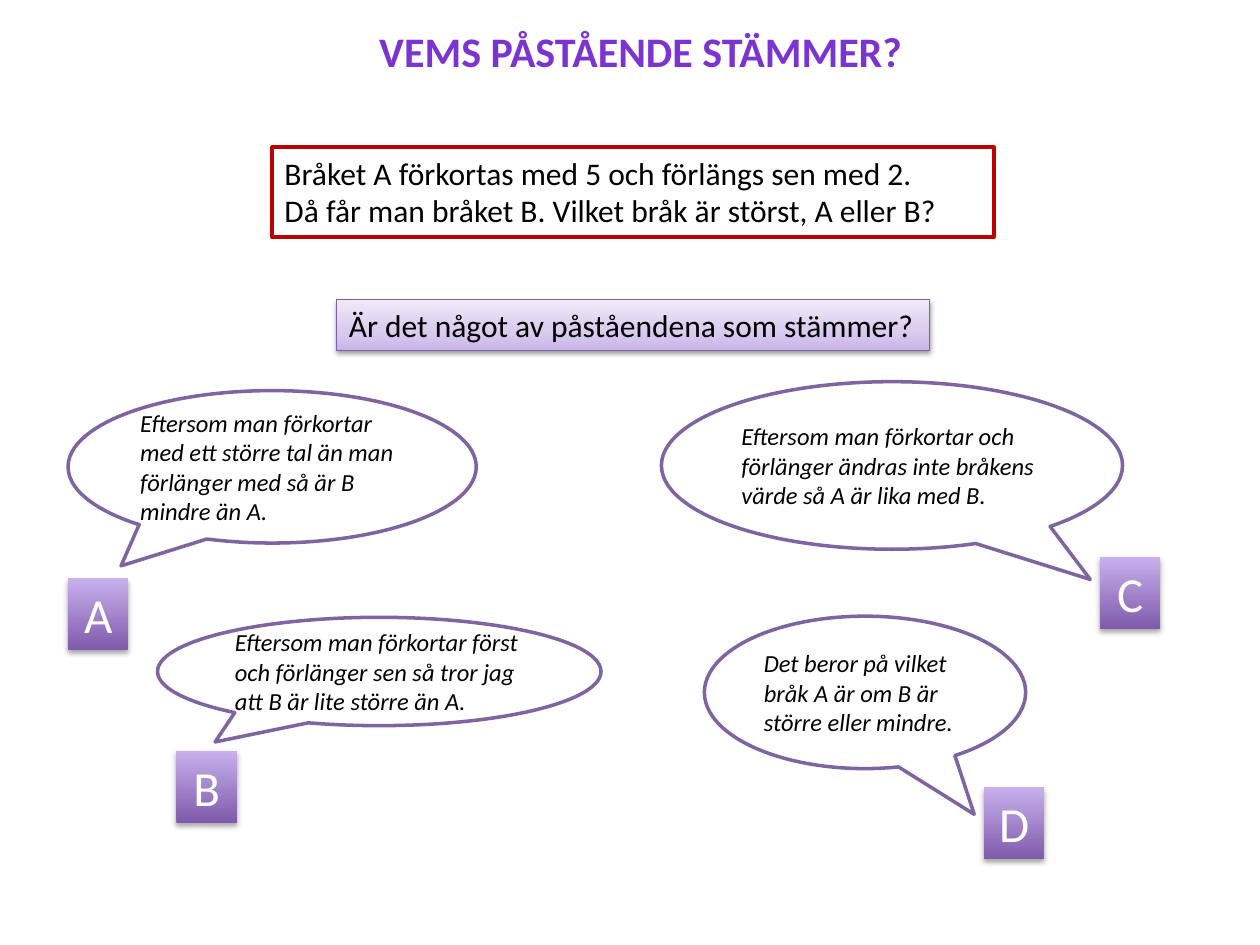
from dataclasses import dataclass

import lxml.etree
import pptx
import pptx.dml.color
import pptx.enum.shapes
import pptx.enum.text
import pptx.oxml.ns
import pptx.util

Inches = pptx.util.Inches
Pt = pptx.util.Pt
Shapes = pptx.enum.shapes.MSO_SHAPE
Align = pptx.enum.text.PP_ALIGN
Anchor = pptx.enum.text.MSO_ANCHOR
qn = pptx.oxml.ns.qn

COLORS = {
    "title": "7B34D2",
    "text": "000000",
    "white": "FFFFFF",
    "task_line": "C00000",
    "question_line": "7D60A0",
    "bubble_line": "8064A2",
    "shadow": "000000",
}
QUESTION_STOPS = [(0, "C9B5E8"), (35, "D8CBEE"), (100, "F0EAF9")]
BADGE_STOPS = [(0, "7F5BAB"), (100, "C8B0ED")]
BADGE_SIZE = (0.48, 0.57)


@dataclass
class Claim:
    letter: str
    text: str
    bubble: tuple[float, float, float, float]
    tail: tuple[float, float]
    badge: tuple[float, float]


CLAIMS = [
    Claim("A", "Eftersom man förkortar med ett större tal än man förlänger med så är B mindre än A.",
          (0.54, 3.1, 3.24, 1.21), (-0.37, 0.65), (0.54, 4.59)),
    Claim("B", "Eftersom man förkortar först och förlänger sen så tror jag att B är lite större än A.",
          (1.25, 4.9, 3.52, 0.86), (-0.37, 0.65), (1.4, 5.96)),
    Claim("C", "Eftersom man förkortar och förlänger ändras inte bråkens värde så A är lika med B.",
          (5.25, 3.03, 3.66, 1.33), (0.43, 0.68), (8.73, 4.42)),
    Claim("D", "Det beror på vilket bråk A är om B är större eller mindre.",
          (5.59, 4.89, 2.55, 1.21), (0.34, 0.8), (7.81, 6.25)),
]


def rgb(name: str) -> pptx.dml.color.RGBColor:
    return pptx.dml.color.RGBColor.from_string(COLORS[name])


def write_text(shape, text: str, size: float, color: str = "text", align=Align.LEFT,
               anchor=Anchor.TOP, bold: bool = False, italic: bool = False) -> None:
    frame = shape.text_frame
    frame.text = text
    frame.word_wrap = True
    frame.auto_size = pptx.enum.text.MSO_AUTO_SIZE.NONE
    frame.vertical_anchor = anchor
    for para in frame.paragraphs:
        para.alignment = align
        for span in para.runs:
            span.font.name = "Calibri"
            span.font.size = Pt(size)
            span.font.bold = bold
            span.font.italic = italic
            span.font.color.rgb = rgb(color)


def add_box(slide, kind, place: tuple[float, ...], line: str | None = None, width: float = 0):
    box = slide.shapes.add_shape(kind, *map(Inches, place))
    box.shadow.inherit = False
    if line:
        box.line.color.rgb = rgb(line)
        box.line.width = Pt(width)
    else:
        box.line.fill.background()
    return box


def fill_upward(box, stops: list[tuple[int, str]]) -> None:
    box.fill.gradient()
    box.fill.gradient_angle = 90
    stop_list = box.fill._xPr.find(".//" + qn("a:gsLst"))
    for stop in list(stop_list):
        stop_list.remove(stop)
    for position, color in stops:
        stop = lxml.etree.SubElement(stop_list, qn("a:gs"), pos=str(position * 1000))
        lxml.etree.SubElement(stop, qn("a:srgbClr"), val=color)


def cast_shadow(box, opacity: int, distance: float) -> None:
    effects = box._element.spPr.find(qn("a:effectLst"))
    shadow = lxml.etree.SubElement(
        effects, qn("a:outerShdw"), blurRad=str(Pt(3.1)), dist=str(Pt(distance)),
        dir="5400000", rotWithShape="0")
    color = lxml.etree.SubElement(shadow, qn("a:srgbClr"), val=COLORS["shadow"])
    lxml.etree.SubElement(color, qn("a:alpha"), val=str(opacity * 1000))


def add_claim(slide, claim: Claim) -> None:
    bubble = add_box(slide, Shapes.OVAL_CALLOUT, claim.bubble, "bubble_line", 2)
    bubble.adjustments[0], bubble.adjustments[1] = claim.tail
    bubble.fill.solid()
    bubble.fill.fore_color.rgb = rgb("white")
    write_text(bubble, claim.text, 14, anchor=Anchor.MIDDLE, italic=True)

    badge = add_box(slide, Shapes.RECTANGLE, claim.badge + BADGE_SIZE)
    fill_upward(badge, BADGE_STOPS)
    cast_shadow(badge, 35, 1.8)
    write_text(badge, claim.letter, 28, "white", Align.CENTER)


def main() -> None:
    deck = pptx.Presentation()
    deck.slide_width, deck.slide_height = Inches(10), Inches(7.5)
    slide = deck.slides.add_slide(deck.slide_layouts[5])

    title = slide.shapes.title
    title.left, title.top = Inches(2.91), Inches(0.15)
    title.width, title.height = Inches(4.86), Inches(0.5)
    write_text(title, "VEMS PÅSTÅENDE STÄMMER?", 24, "title", bold=True)

    task = add_box(slide, Shapes.RECTANGLE, (2.16, 1.17, 5.73, 0.71), "task_line", 2.25)
    task.fill.background()
    write_text(task, "Bråket A förkortas med 5 och förlängs sen med 2.\n"
                     "Då får man bråket B. Vilket bråk är störst, A eller B?", 18)

    question = add_box(slide, Shapes.RECTANGLE, (2.67, 2.38, 4.71, 0.4), "question_line", 0.75)
    fill_upward(question, QUESTION_STOPS)
    cast_shadow(question, 38, 1.6)
    write_text(question, "Är det något av påståendena som stämmer?", 18)

    for claim in CLAIMS:
        add_claim(slide, claim)

    deck.save("out.pptx")


if __name__ == "__main__":
    main()
